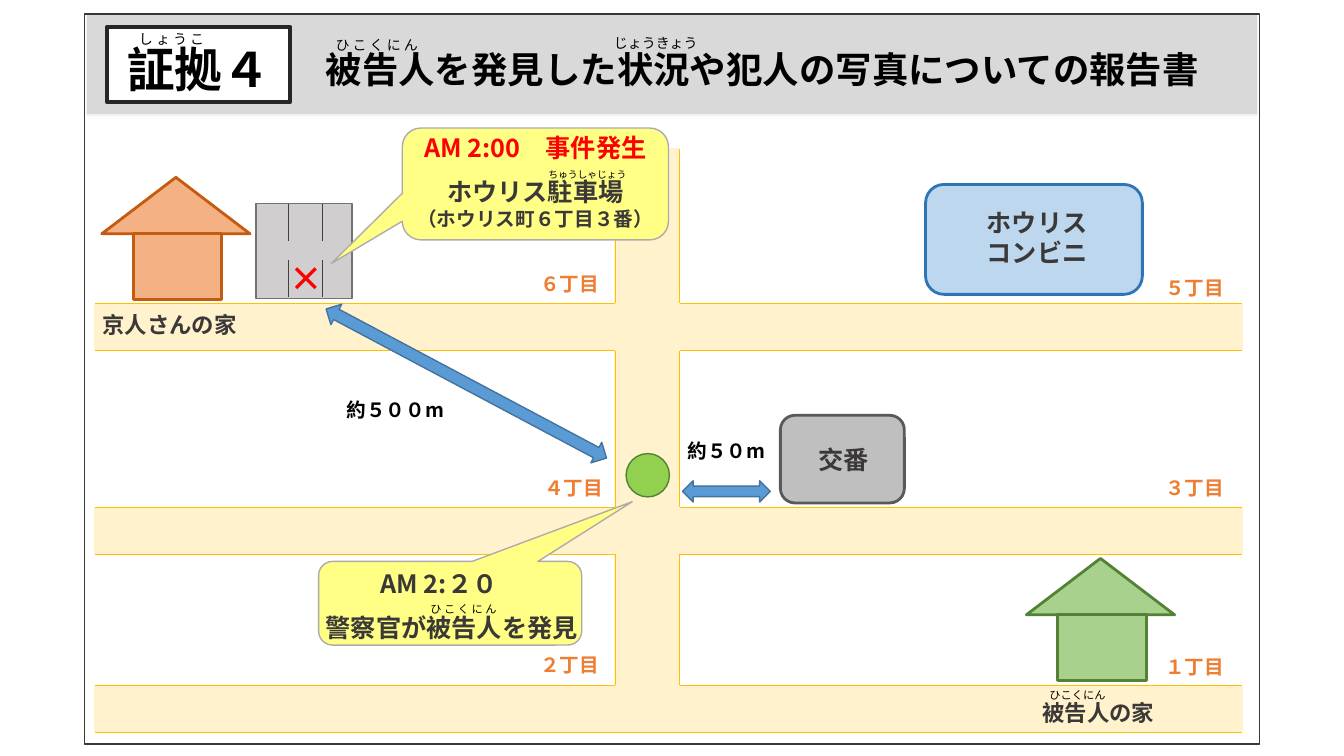
"""Build the evidence map slide."""
from dataclasses import dataclass

from lxml import etree
from pptx import Presentation
from pptx import util as u
from pptx.dml import color
from pptx.enum import shapes, text
from pptx.oxml import ns

KIND = shapes.MSO_SHAPE


@dataclass(frozen=True)
class Theme:
    """Hold the colours and type sizes of the slide."""
    font: str = "Noto Sans CJK JP"
    ink: str = "3B3838"
    black: str = "000000"
    white: str = "FFFFFF"
    red: str = "FF0000"
    district: str = "ED7E33"
    banner: tuple = ("D9D9D9", "F2F2F2")
    badge: tuple = ("FFFFFF", "262626")
    road: tuple = ("FFF2CC", "FFF2CC")
    kerb: str = "FFC000"
    note: tuple = ("FFFF85", "AFABAB")
    arrow: tuple = ("5B9BD5", "43739E")
    victim: tuple = ("F4B183", "C55A11")
    accused: tuple = ("A9D18E", "548235")
    store: tuple = ("BDD7EE", "2E75B6")
    police: tuple = ("BFBFBF", "595959")
    parking: tuple = ("D0CECE", "767171")
    bay: str = "404040"
    spot: tuple = ("92D050", "548235")
    badge_size: int = 34
    title_size: int = 26
    mark_size: int = 24
    body_size: int = 18
    place_size: int = 16
    label_size: int = 14
    ruby_size: int = 10
    small_ruby_size: int = 8
    tiny_ruby_size: int = 7


THEME = Theme()


def rgb(value):
    """Turn a hex string into a colour."""
    return color.RGBColor.from_string(value)


def inches(box):
    """Turn a box of numbers into lengths."""
    return [u.Inches(value) for value in box]


def add_block(slide, kind, box, colours, weight=1, adjustments=()):
    """Add a preset shape with a (fill, line) pair of colours."""
    shape = slide.shapes.add_shape(kind, *inches(box))
    shape.shadow.inherit = False
    fill, line = colours
    if fill:
        shape.fill.solid()
        shape.fill.fore_color.rgb = rgb(fill)
    else:
        shape.fill.background()
    shape.line.color.rgb = rgb(line)
    shape.line.width = u.Pt(weight)
    for index, value in enumerate(adjustments):
        shape.adjustments[index] = value
    return shape


def add_rule(slide, start, end, colour):
    """Add a thin straight line."""
    line = slide.shapes.add_connector(shapes.MSO_CONNECTOR.STRAIGHT, *inches(start + end))
    line.line.color.rgb = rgb(colour)
    line.line.width = u.Pt(0.5)
    etree.SubElement(line.element.spPr, ns.qn("a:effectLst"))


def style_run(run, size, colour, bold=True):
    """Format a run, including its East Asian font."""
    run.font.size = u.Pt(size)
    run.font.bold = bold
    run.font.color.rgb = rgb(colour)
    run.font.name = THEME.font
    latin = run.font._element.find(ns.qn("a:latin"))
    latin.addnext(etree.Element(ns.qn("a:ea"), typeface=THEME.font))


def add_label(slide, box, lines, size, colour, centred=False, bold=True):
    """Add a text box; a line is a string or (string, size, colour, space before)."""
    label = slide.shapes.add_textbox(*inches(box))
    frame = label.text_frame
    frame.word_wrap = True
    for index, line in enumerate([lines] if isinstance(lines, str) else lines):
        words, line_size, line_colour, gap = (line, size, colour, 0) if isinstance(line, str) else line
        paragraph = frame.add_paragraph() if index else frame.paragraphs[0]
        paragraph.text = words
        paragraph.space_before = u.Pt(gap)
        paragraph.alignment = text.PP_ALIGN.CENTER if centred else text.PP_ALIGN.LEFT
        style_run(paragraph.runs[0], line_size, line_colour, bold)
    return label


def add_ruby(slide, box, words, size):
    """Add a small reading aid above a word."""
    add_label(slide, box, words, size, THEME.black, bold=False)


def draw_header(slide, box):
    """Draw the banner with its evidence badge and title."""
    left, top, _, _ = box
    banner = add_block(slide, KIND.RECTANGLE, box, THEME.banner)
    title = slide.shapes.title
    banner.element.addnext(title.element)
    title.left, title.top, title.width, title.height = inches((left + 2.27, top + 0.27, 9.89, 0.54))
    badge = add_block(slide, KIND.RECTANGLE, (left + 0.2, top + 0.13, 1.82, 0.74), THEME.badge, 3)
    badge.text_frame.margin_top = u.Inches(0.12)
    for shape, words, size, align in (
            (title, "被告人を発見した状況や犯人の写真についての報告書", THEME.title_size, text.PP_ALIGN.LEFT),
            (badge, "証拠４", THEME.badge_size, text.PP_ALIGN.CENTER)):
        frame = shape.text_frame
        frame.text = words
        frame.word_wrap = True
        frame.auto_size = text.MSO_AUTO_SIZE.NONE
        frame.vertical_anchor = text.MSO_ANCHOR.MIDDLE
        frame.paragraphs[0].alignment = align
        style_run(frame.paragraphs[0].runs[0], size, THEME.black)
    for dx, dy, words in ((0.42, 0.11, "し ょ う こ"), (2.37, 0.17, "ひ こ く に ん"), (5.13, 0.15, "じょうきょう")):
        add_ruby(slide, (left + dx, top + dy, 1.85, 0.27), words, THEME.ruby_size)


def draw_roads(slide, box):
    """Draw three cross streets, the avenue and their kerbs."""
    left, top, width, height = box
    right, bottom = left + width, top + height
    avenue = (left + 5.16, left + 5.8)
    depth = 0.47
    streets = [top + offset for offset in (1.53, 3.55, 5.32)]
    for street in streets:
        add_block(slide, KIND.RECTANGLE, (left, street + 0.01, width, depth - 0.02), THEME.road)
    add_block(slide, KIND.RECTANGLE, (avenue[0], top, avenue[1] - avenue[0], height - depth), THEME.road)
    for edge, end in zip(avenue, (left, right)):
        block_top = top
        for street in streets:
            add_rule(slide, (edge, block_top), (edge, street), THEME.kerb)
            add_rule(slide, (edge, street), (end, street), THEME.kerb)
            block_top = street + depth
            if street != streets[-1]:
                add_rule(slide, (edge, block_top), (end, block_top), THEME.kerb)
    add_rule(slide, (left, bottom), (right, bottom), THEME.kerb)


def draw_house(slide, box, colours):
    """Draw a house as a roof above a wall."""
    left, top, width, height = box
    roof = 0.56
    add_block(slide, KIND.ISOSCELES_TRIANGLE, (left, top, width, roof), colours, 2)
    add_block(slide, KIND.RECTANGLE, (left + 0.31, top + roof, 0.88, height - roof), colours, 2)


def draw_building(slide, box, label_box, lines, colours):
    """Draw a rounded building with its name."""
    left, top, _, _ = box
    dx, dy, width, height = label_box
    add_block(slide, KIND.ROUNDED_RECTANGLE, box, colours, 2)
    add_label(slide, (left + dx, top + dy, width, height), lines, THEME.body_size, THEME.ink, True)


def draw_parking(slide, box):
    """Draw the car park with four bay lines and the scene mark."""
    left, top, width, height = box
    add_block(slide, KIND.RECTANGLE, box, THEME.parking)
    for x in (left + 0.32, left + 0.66):
        for y in (top, top + height - 0.38):
            add_rule(slide, (x, y), (x, y + 0.37), THEME.bay)
    mark = add_label(slide, (left + 0.23, top + 0.49, 0.38, 0.5), "×", THEME.mark_size, THEME.red)
    outline = mark.text_frame.paragraphs[0].runs[0].font._element
    line = etree.Element(ns.qn("a:ln"), w=str(u.Pt(3)))
    fill = etree.SubElement(line, ns.qn("a:solidFill"))
    etree.SubElement(fill, ns.qn("a:srgbClr"), val=THEME.red)
    outline.insert(0, line)


def draw_callout(slide, box, tail, lines, text_top):
    """Draw a speech bubble with centred text."""
    left, top, width, height = box
    add_block(slide, KIND.ROUNDED_RECTANGULAR_CALLOUT, box, THEME.note, 1, (*tail, 0.167))
    add_label(slide, (left - 0.28, top + text_top, 3.2, height), lines, THEME.body_size, THEME.ink, True)


def draw_distance(slide, box, rotation, label_at, words):
    """Draw a two-headed arrow with its distance."""
    left, top, _, _ = box
    arrow = add_block(slide, KIND.LEFT_RIGHT_ARROW, box, THEME.arrow)
    arrow.rotation = rotation
    add_label(slide, (left + label_at[0], top + label_at[1], 1.33, 0.34), words, THEME.label_size, THEME.black)


def draw_map(slide, box):
    """Draw the street map with its places and events."""
    left, top, width, height = box

    def at(x, y, *size):
        return (left + x, top + y, *size)

    draw_roads(slide, at(0.1, 1.34, 11.38, 5.79))
    draw_house(slide, at(9.34, 5.4, 1.47, 1.21), THEME.accused)
    draw_house(slide, at(0.17, 1.62, 1.47, 1.21), THEME.victim)
    for place, words in ((at(0.08, 2.9, 2.1, 0.37), "京人さんの家"), (at(9.4, 6.75, 1.71, 0.37), "被告人の家")):
        add_label(slide, place, words, THEME.place_size, THEME.ink)
    draw_building(slide, at(8.34, 1.69, 2.15, 1.09), (0.21, 0.18, 1.79, 0.71), ("ホウリス", "コンビニ"), THEME.store)
    draw_building(slide, at(6.9, 3.98, 1.23, 0.87), (-0.27, 0.24, 1.79, 0.4), "交番", THEME.police)
    draw_parking(slide, at(1.7, 1.88, 0.95, 0.94))
    for x, y, number in ((10.62, 6.31, "１"), (4.42, 6.29, "２"), (10.62, 4.53, "３"),
                         (4.46, 4.53, "４"), (10.62, 2.55, "５"), (4.42, 2.51, "６")):
        add_label(slide, at(x, y, 1.33, 0.34), number + "丁目", THEME.label_size, THEME.district)
    draw_distance(slide, at(5.93, 4.63, 0.87, 0.21), 0, (-0.05, -0.46), "約５０m")
    draw_distance(slide, at(2.21, 3.55, 3.15, 0.23), 28, (0.29, 0.21), "約５００m")
    draw_callout(slide, at(2.32, 5.43, 2.61, 0.83), (0.692, -1.214),
                 ("AM 2:２０　", ("警察官が被告人を発見", THEME.body_size, THEME.ink, 10)), 0.02)
    draw_callout(slide, at(3.15, 1.13, 2.64, 1.11), (-0.766, 0.71),
                 (("AM 2:00　事件発生", THEME.body_size, THEME.red, 0),
                  ("ホウリス駐車場", THEME.body_size, THEME.ink, 10),
                  ("（ホウリス町６丁目３番）", THEME.label_size, THEME.ink, 0)), -0.01)
    add_ruby(slide, at(4.5, 1.48, 1.85, 0.22), "ちゅうしゃじょう", THEME.tiny_ruby_size)
    add_ruby(slide, at(3.33, 5.79, 1.07, 0.24), "ひ こ く に ん", THEME.small_ruby_size)
    add_ruby(slide, at(9.47, 6.64, 1.07, 0.24), "ひこくにん", THEME.small_ruby_size)
    add_block(slide, KIND.FLOWCHART_CONNECTOR, at(5.37, 4.36, 0.43, 0.43), THEME.spot)
    add_block(slide, KIND.RECTANGLE, box, (None, THEME.ink))


def main():
    """Build and save the presentation."""
    presentation = Presentation()
    presentation.slide_width, presentation.slide_height = inches((13.33, 7.5))
    slide = presentation.slides.add_slide(presentation.slide_layouts[5])
    draw_header(slide, (0.86, 0.14, 11.61, 1))
    draw_map(slide, (0.84, 0.14, 11.65, 7.24))
    presentation.save("out.pptx")


if __name__ == "__main__":
    main()
